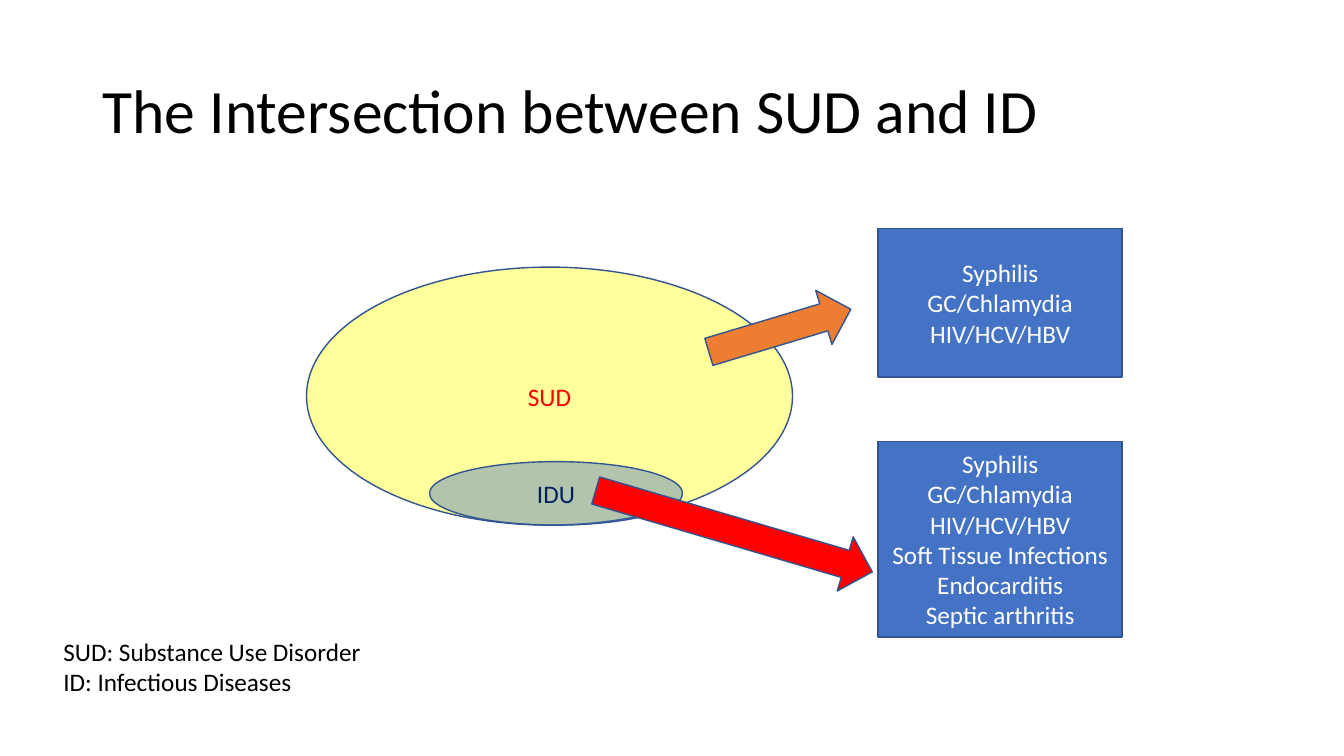
"""Build a slide showing how substance use disorder and infectious diseases intersect."""
from lxml import etree
from pptx import Presentation
from pptx.dml.color import RGBColor
from pptx.enum.shapes import MSO_SHAPE
from pptx.enum.text import MSO_ANCHOR, PP_ALIGN
from pptx.oxml.ns import qn
from pptx.util import Pt

ELLIPSE, RECTANGLE, ARROW = MSO_SHAPE.OVAL, MSO_SHAPE.RECTANGLE, MSO_SHAPE.RIGHT_ARROW
TOP, MIDDLE = MSO_ANCHOR.TOP, MSO_ANCHOR.MIDDLE
LEFT, CENTER = PP_ALIGN.LEFT, PP_ALIGN.CENTER
PX = 9144

THEME = {
    "font": "Calibri", "title_size": 44, "body_size": 18, "line_width": 1,
    "black": "000000", "white": "FFFFFF", "red": "FF0000", "navy": "002060",
    "yellow": "FFFF00", "blue": "4472C4", "orange": "ED7D31", "outline": "325491",
}


def color(name):
    return RGBColor.from_string(THEME[name])


def write_lines(shape, lines, ink, size="body_size", align=CENTER, anchor=MIDDLE, spacing=1.0):
    frame = shape.text_frame
    frame.word_wrap = True
    frame.vertical_anchor = anchor
    for index, line in enumerate(lines):
        paragraph = frame.add_paragraph() if index else frame.paragraphs[0]
        paragraph.alignment = align
        paragraph.line_spacing = spacing
        run = paragraph.add_run()
        run.text = line
        run.font.color.rgb = color(ink)
        for name, value in {"name": THEME["font"], "size": Pt(THEME[size])}.items():
            setattr(run.font, name, value)


presentation = Presentation()
presentation.slide_width, presentation.slide_height = 1333 * PX, 750 * PX
slide = presentation.slides.add_slide(presentation.slide_layouts[6])

title = slide.shapes.add_textbox(92 * PX, 40 * PX, 1150 * PX, 145 * PX)
write_lines(title, ["The Intersection between SUD and ID"], "black", "title_size", LEFT, spacing=0.9)

shared_infections = ["Syphilis", "GC/Chlamydia", "HIV/HCV/HBV"]
injection_infections = ["Soft Tissue Infections", "Endocarditis", "Septic arthritis"]

diagram = [
    (ELLIPSE, (304, 265, 482, 256), "yellow", 39, 0, ["SUD"], "red"),
    (ELLIPSE, (426, 458, 251, 63), "blue", 41, 0, ["IDU"], "navy"),
    (RECTANGLE, (871, 227, 242, 147), "blue", 100, 0, shared_infections, "white"),
    (RECTANGLE, (871, 438, 242, 194), "blue", 100, 0, shared_infections + injection_infections, "white"),
    (ARROW, (700, 300, 147, 56), "orange", 100, 343.3, [], "white"),
    (ARROW, (585, 499, 286, 56), "red", 100, 16.4, [], "white"),
]
for kind, box, fill, opacity, rotation, lines, ink in diagram:
    shape = slide.shapes.add_shape(kind, *(length * PX for length in box))
    shape.shadow.inherit = False
    shape.rotation = rotation
    shape.fill.solid()
    shape.fill.fore_color.rgb = color(fill)
    if opacity < 100:
        fill_color = shape.fill._xPr.find(qn("a:solidFill"))[0]
        etree.SubElement(fill_color, qn("a:alpha"), val=str(opacity * 1000))
    shape.line.color.rgb = color("outline")
    shape.line.width = Pt(THEME["line_width"])
    write_lines(shape, lines, ink)

legend = slide.shapes.add_textbox(53 * PX, 626 * PX, 356 * PX, 71 * PX)
write_lines(legend, ["SUD: Substance Use Disorder", "ID: Infectious Diseases"], "black", align=LEFT, anchor=TOP)

presentation.save("out.pptx")
